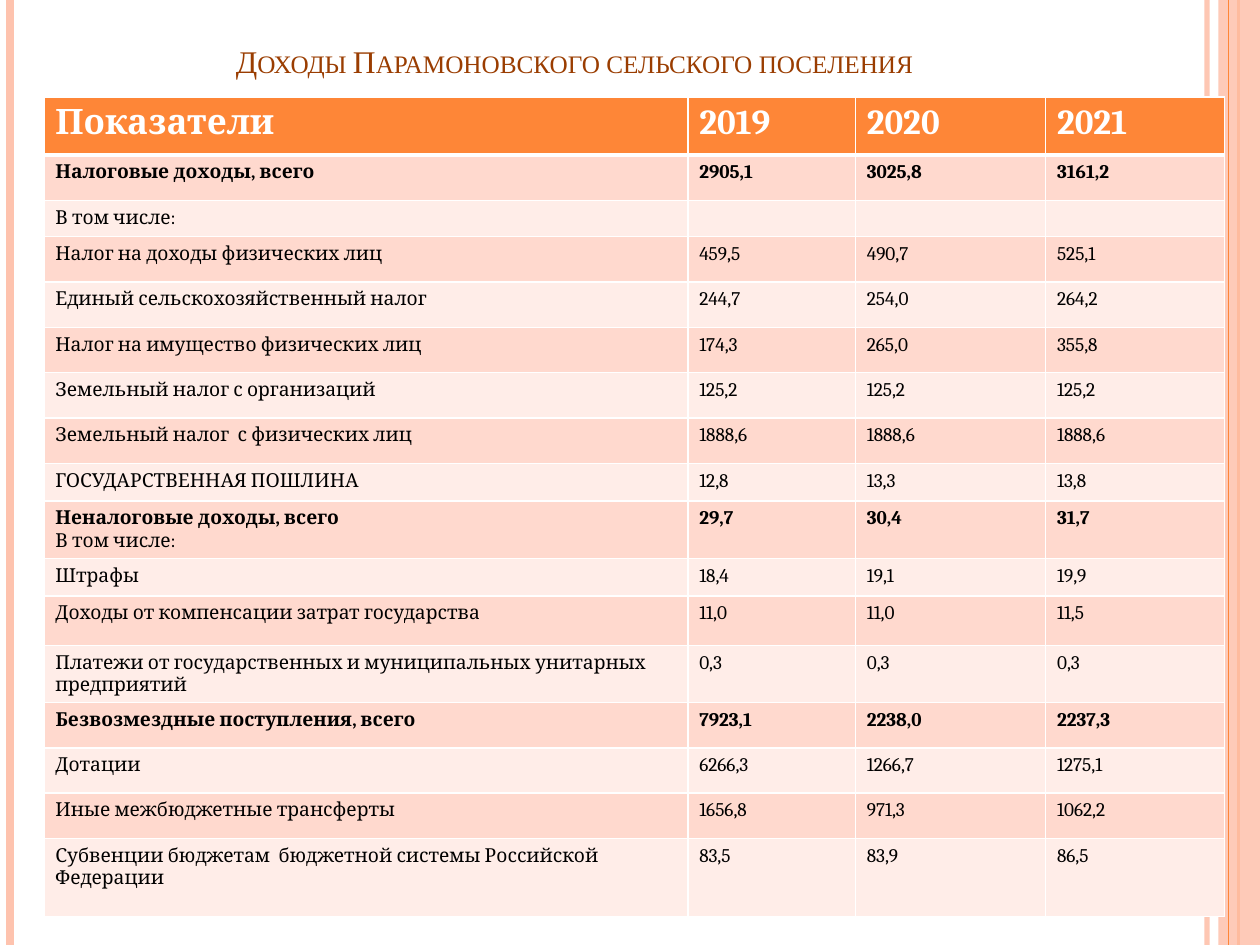
import lxml.etree
import pptx
import pptx.dml.color
import pptx.enum.shapes
import pptx.enum.text
import pptx.oxml.ns
import pptx.util

Inches = pptx.util.Inches
Pt = pptx.util.Pt
qn = pptx.oxml.ns.qn

ORANGE, PEACH, BROWN = "FE8637", "FEC3AE", "9A3D01"
WHITE, BLACK = "FFFFFF", "000000"
BANDS = ("FFD9CE", "FFEDE8")

# x, colour, width in points, opacity in percent
STRIPES = [
    (9.58, PEACH, 3, 93),
    (0.08, PEACH, 4.5, 100),
    (9.83, ORANGE, 1.5, 100),
    (9.75, ORANGE, 0.75, 100),
]

COLUMN_WIDTHS = [5.11, 1.33, 1.51, 1.42]
HEADERS = ["Показатели", "2019", "2020", "2021"]

# Row height, label, values by year; labels ending in TOTAL head a bold row
TOTAL = "всего"
INCOME_ROWS = [
    (0.36, "Налоговые доходы, всего", "2905,1", "3025,8", "3161,2"),
    (0.27, "В том числе:", "", "", ""),
    (0.36, "Налог на доходы физических лиц", "459,5", "490,7", "525,1"),
    (0.36, "Единый сельскохозяйственный налог", "244,7", "254,0", "264,2"),
    (0.36, "Налог на имущество физических лиц", "174,3", "265,0", "355,8"),
    (0.36, "Земельный налог с организаций", "125,2", "125,2", "125,2"),
    (0.36, "Земельный налог  с физических лиц", "1888,6", "1888,6", "1888,6"),
    (0.3, "ГОСУДАРСТВЕННАЯ ПОШЛИНА", "12,8", "13,3", "13,8"),
    (0.45, "Неналоговые доходы, всего\nВ том числе:", "29,7", "30,4", "31,7"),
    (0.3, "Штрафы", "18,4", "19,1", "19,9"),
    (0.39, "Доходы от компенсации затрат государства", "11,0", "11,0", "11,5"),
    (0.45, "Платежи от государственных и муниципальных унитарных предприятий",
     "0,3", "0,3", "0,3"),
    (0.36, "Безвозмездные поступления, всего", "7923,1", "2238,0", "2237,3"),
    (0.36, "Дотации", "6266,3", "1266,7", "1275,1"),
    (0.36, "Иные межбюджетные трансферты", "1656,8", "971,3", "1062,2"),
    (0.62, "Субвенции бюджетам  бюджетной системы Российской Федерации",
     "83,5", "83,9", "86,5"),
]


def rgb(value):
    return pptx.dml.color.RGBColor.from_string(value)


def set_opacity(parent, percent):
    """Apply opacity to the solid colour found inside an XML element."""
    if percent < 100:
        color = parent.find(".//" + qn("a:srgbClr"))
        lxml.etree.SubElement(color, qn("a:alpha"), val=str(percent * 1000))


def write_text(paragraph, text, *, size, color, font="Cambria", bold=False,
               small_caps=False):
    if not text:
        # An empty cell still needs its size, or its row grows
        lxml.etree.SubElement(paragraph._p, qn("a:endParaRPr"), sz=str(size * 100))
        return
    run = paragraph.add_run()
    run.text = text
    run.font.name = font
    run.font.size = Pt(size)
    run.font.bold = bold
    run.font.color.rgb = rgb(color)
    if small_caps:
        run.font._element.set("cap", "small")


def add_stripe(slide, x, color, width, opacity):
    connector = slide.shapes.add_connector(
        pptx.enum.shapes.MSO_CONNECTOR.STRAIGHT,
        Inches(x), Inches(0), Inches(x), Inches(7.5))
    connector.line.color.rgb = rgb(color)
    connector.line.width = Pt(width)
    properties = connector._element.spPr
    set_opacity(properties, opacity)
    lxml.etree.SubElement(properties, qn("a:effectLst"))


def add_side_band(slide):
    band = slide.shapes.add_shape(
        pptx.enum.shapes.MSO_SHAPE.RECTANGLE,
        Inches(9.67), Inches(0), Inches(0.33), Inches(7.5))
    band.shadow.inherit = False
    band.fill.solid()
    band.fill.fore_color.rgb = rgb(PEACH)
    band.line.fill.background()
    set_opacity(band._element.spPr, 87)


def set_title(slide, text):
    title = slide.shapes.title
    title.left, title.top = Inches(0.5), Inches(0.3)
    title.width, title.height = Inches(8.17), Inches(0.38)
    frame = title.text_frame
    frame.word_wrap = True
    frame.auto_size = pptx.enum.text.MSO_AUTO_SIZE.NONE
    frame.vertical_anchor = pptx.enum.text.MSO_ANCHOR.BOTTOM
    paragraph = frame.paragraphs[0]
    paragraph.alignment = pptx.enum.text.PP_ALIGN.CENTER
    write_text(paragraph, text, size=18, color=BROWN,
               font="Times New Roman", small_caps=True)


def set_borders(cell, **widths):
    """Draw white borders; widths are points by side L, R, T, B."""
    properties = cell._tc.get_or_add_tcPr()
    for side in "LRTB":
        line = lxml.etree.SubElement(
            properties, qn("a:ln" + side), w=str(Pt(widths.get(side, 1))))
        fill = lxml.etree.SubElement(line, qn("a:solidFill"))
        lxml.etree.SubElement(fill, qn("a:srgbClr"), val=WHITE)


def fill_cell(cell, text, fill, borders, *, bold_row, **text_format):
    set_borders(cell, **borders)
    cell.fill.solid()
    cell.fill.fore_color.rgb = rgb(fill)
    cell.margin_left = cell.margin_right = Inches(0.09)
    cell.margin_top = cell.margin_bottom = Inches(0.05)
    frame = cell.text_frame
    for index, line in enumerate(text.split("\n")):
        paragraph = frame.paragraphs[0] if index == 0 else frame.add_paragraph()
        write_text(paragraph, line, bold=bold_row and index == 0, **text_format)


def add_income_table(slide):
    rows = [(0.46, *HEADERS)] + INCOME_ROWS
    table = slide.shapes.add_table(
        len(rows), len(COLUMN_WIDTHS), Inches(0.35), Inches(0.77),
        Inches(sum(COLUMN_WIDTHS)), Inches(sum(row[0] for row in rows))).table
    for column, width in zip(table.columns, COLUMN_WIDTHS):
        column.width = Inches(width)
    for row_index, (height, *texts) in enumerate(rows):
        table.rows[row_index].height = Inches(height)
        if row_index == 0:
            fill, size, color, bold, borders = ORANGE, 20, WHITE, True, {"B": 3}
        else:
            fill, size, color = BANDS[(row_index - 1) % 2], 11, BLACK
            bold = texts[0].split("\n")[0].endswith(TOTAL)
            borders = {"T": 3} if row_index == 1 else {}
        for column_index, text in enumerate(texts):
            fill_cell(table.cell(row_index, column_index), text, fill, borders,
                      bold_row=bold, size=size, color=color)


def main():
    presentation = pptx.Presentation()
    presentation.slide_width = Inches(10)
    presentation.slide_height = Inches(7.5)
    slide = presentation.slides.add_slide(presentation.slide_layouts[5])

    # Side decoration
    for stripe in STRIPES[:-1]:
        add_stripe(slide, *stripe)
    add_side_band(slide)
    add_stripe(slide, *STRIPES[-1])

    # Content; the closing space is part of the centred title
    set_title(slide, "Доходы Парамоновского сельского поселения ")
    add_income_table(slide)

    presentation.save("out.pptx")


if __name__ == "__main__":
    main()
